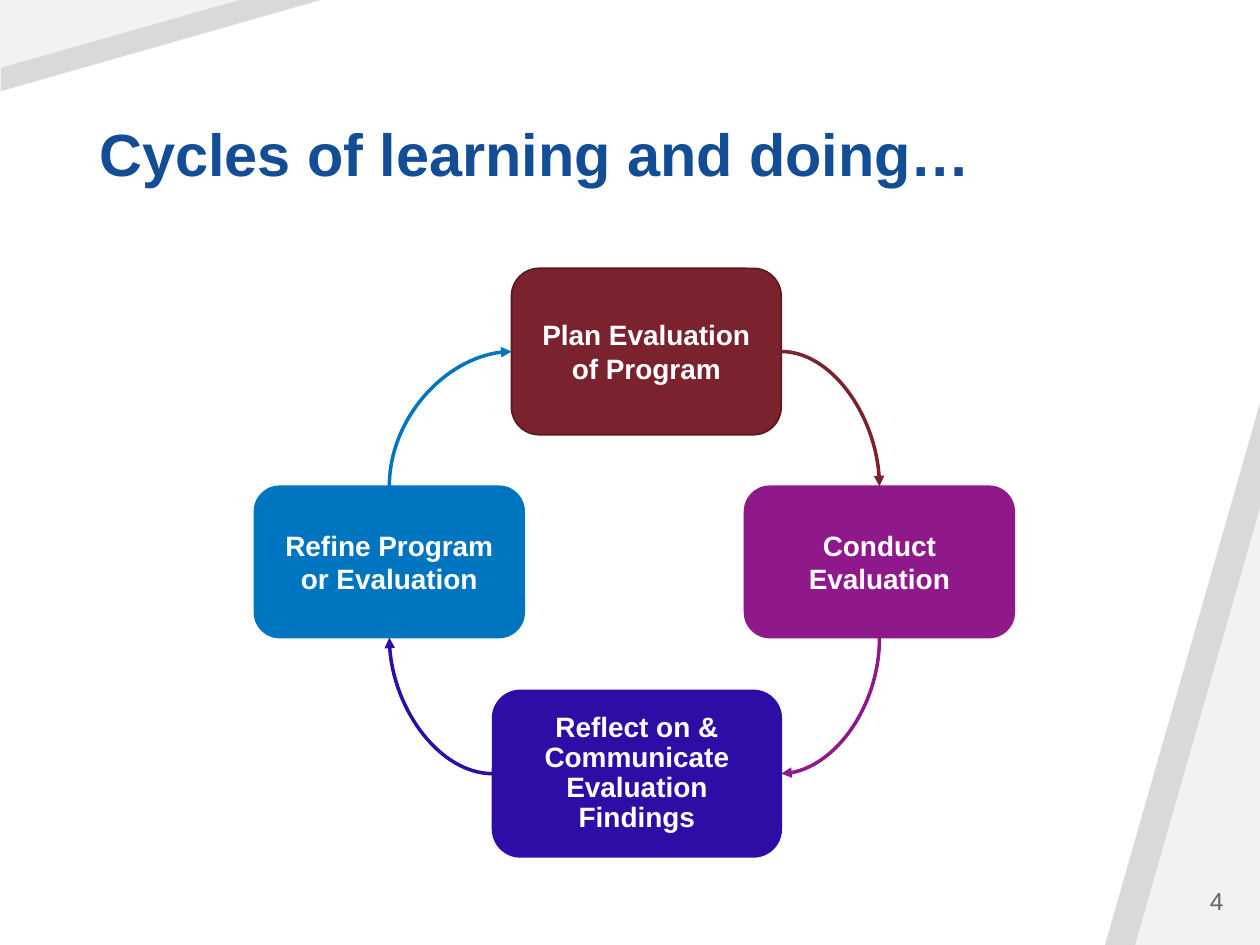
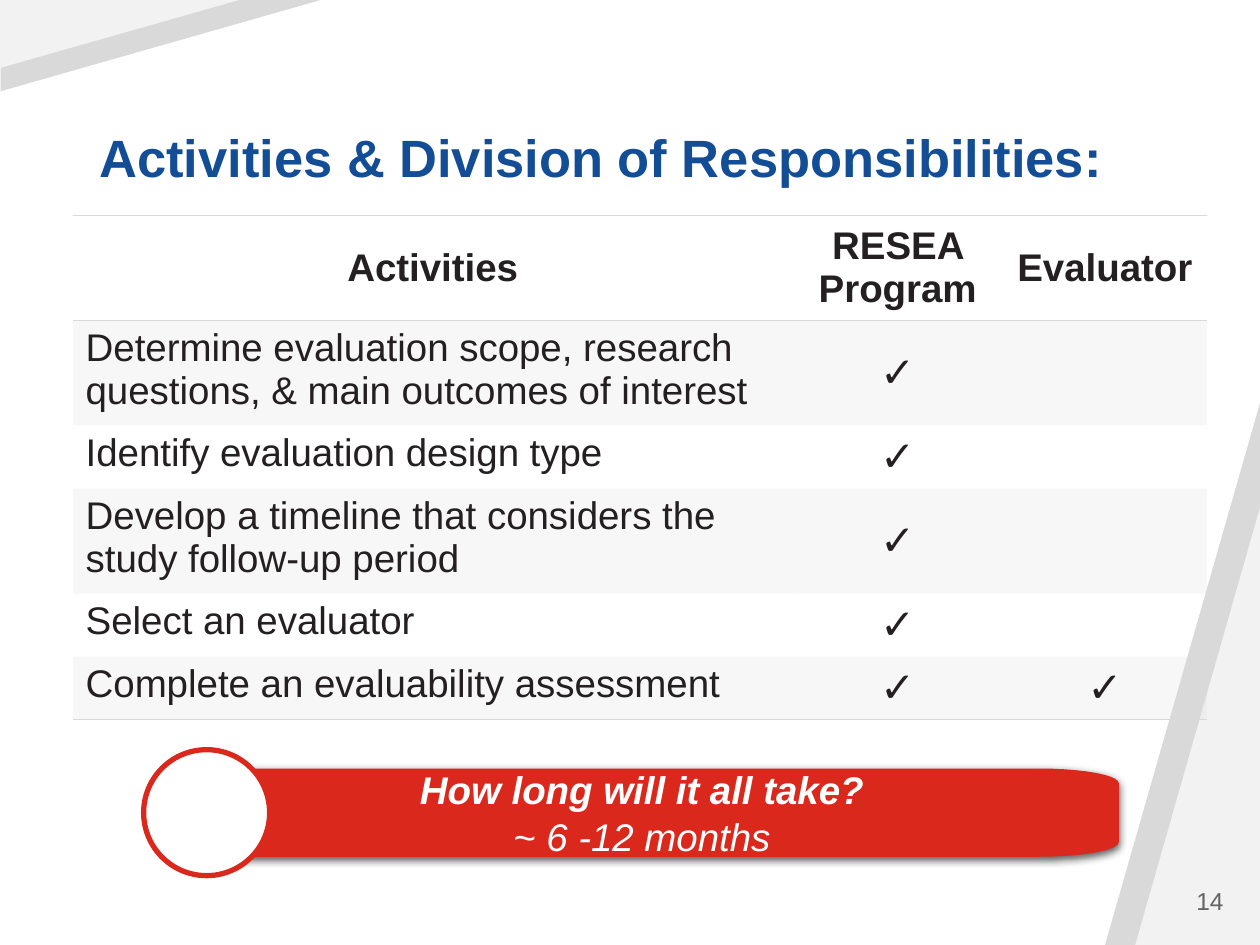
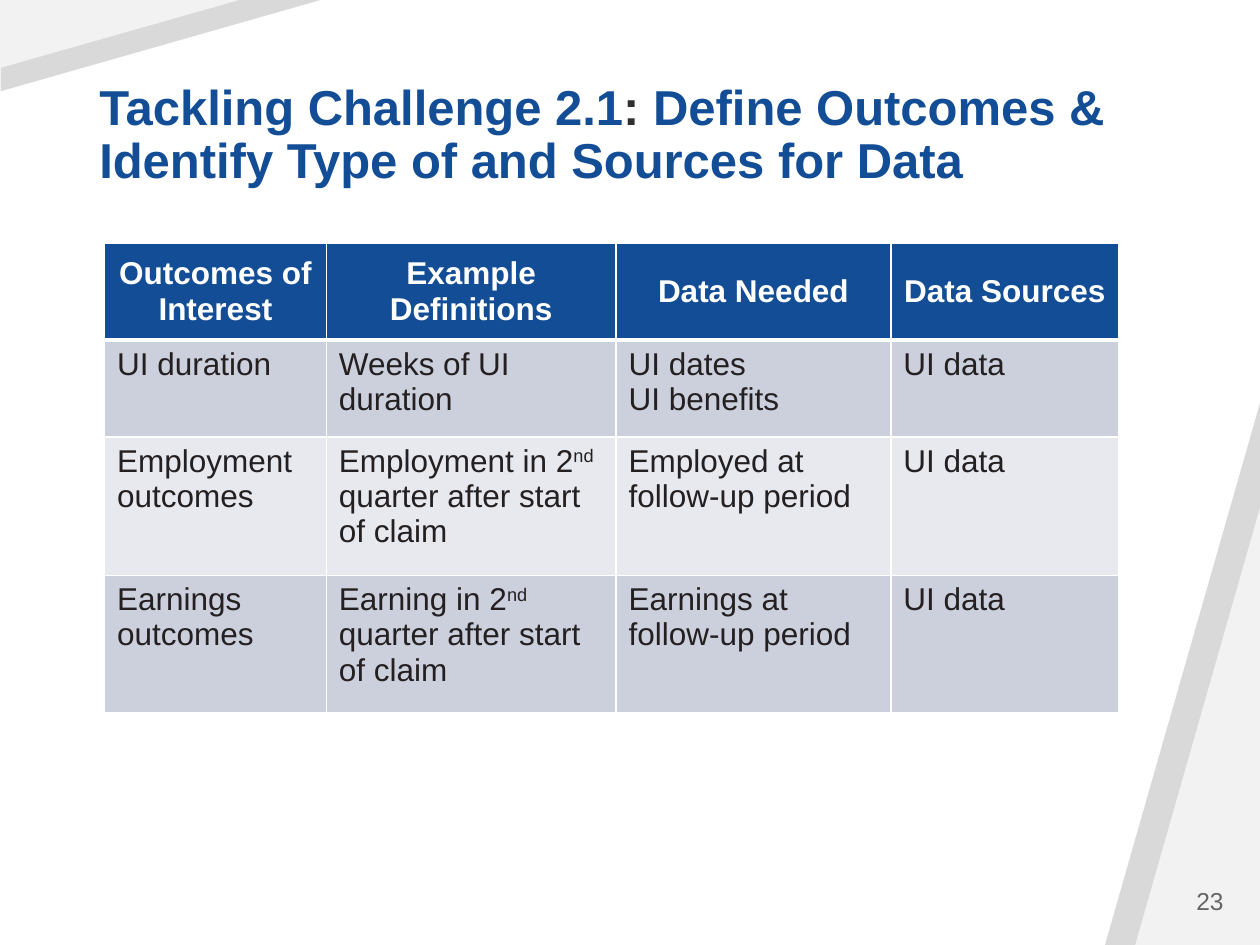
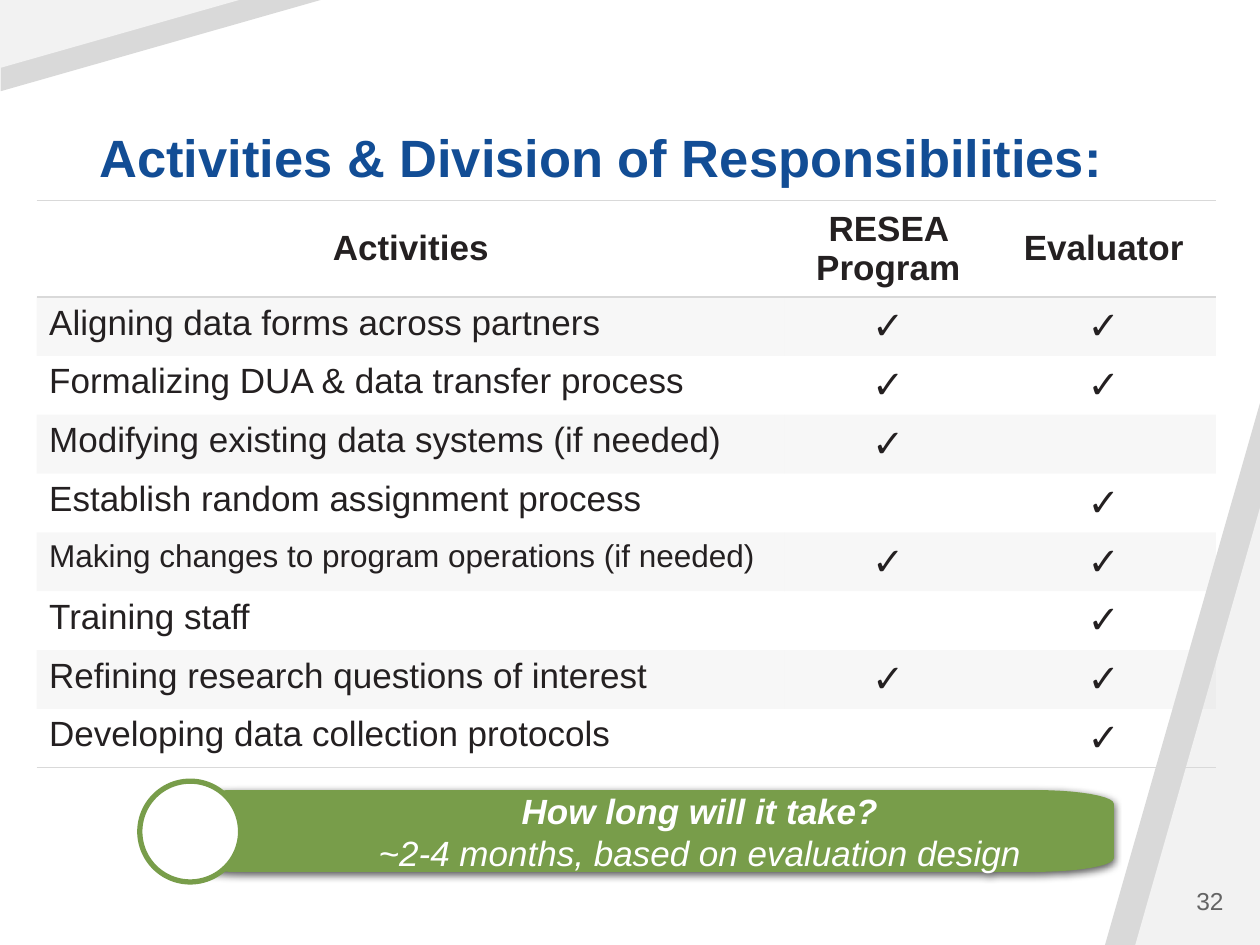
from math import cos, sin, radians
from lxml.etree import SubElement
from pptx import Presentation
from pptx.dml.color import RGBColor
from pptx.enum.shapes import MSO_CONNECTOR, MSO_SHAPE
from pptx.enum.text import MSO_ANCHOR, PP_ALIGN
from pptx.oxml.ns import qn
from pptx.util import Inches, Pt

FONT = "Arial"
NO_STYLE = "{2D5ABB26-0587-4C30-8999-92F81FD0307C}"

NAVY = RGBColor(0x12, 0x4D, 0x95)
INK = RGBColor(0x24, 0x20, 0x21)
COAL = RGBColor(0x30, 0x30, 0x30)
GREY = RGBColor(0x64, 0x64, 0x64)
SILVER = RGBColor(0xD9, 0xD9, 0xD9)
PALE = RGBColor(0xF2, 0xF2, 0xF2)
WHITE = RGBColor(0xFF, 0xFF, 0xFF)
WINE = RGBColor(0x7A, 0x23, 0x2E)
MAROON = RGBColor(0x5A, 0x1A, 0x22)
PLUM = RGBColor(0x8F, 0x19, 0x8A)
INDIGO = RGBColor(0x2E, 0x0D, 0xA6)
BLUE = RGBColor(0x00, 0x75, 0xBF)
RED = RGBColor(0xDA, 0x29, 0x1C)
GREEN = RGBColor(0x78, 0x9D, 0x4A)
BAND = RGBColor(0xCC, 0xD0, 0xDD)
LIGHT = RGBColor(0xE7, 0xE9, 0xEF)

# Content: corner bands (box, turn, fill)
WEDGES = [
    ((8.77, 3.2, 1.23, 4.3), 0, SILVER),
    ((9.01, 4.03, 0.99, 3.47), 0, PALE),
    ((0.92, -0.92, 0.73, 2.56), 270, SILVER),
    ((0.68, -0.68, 0.54, 1.9), 270, PALE),
]

# Content: cycle steps, clockwise (text, box, fill, line, line spacing)
STEPS = [
    ("Plan Evaluation of Program", (4.06, 2.13, 2.14, 1.32), WINE, MAROON, 1),
    ("Conduct Evaluation", (5.91, 3.86, 2.14, 1.2), PLUM, PLUM, 1),
    ("Reflect on & Communicate Evaluation Findings",
     (3.91, 5.48, 2.29, 1.32), INDIGO, INDIGO, 0.9),
    ("Refine Program or Evaluation", (2.02, 3.86, 2.14, 1.2), BLUE, BLUE, 1),
]

# Content: duty tables (activity, program does it, evaluator does it)
DUTY_TITLE = "Activities & Division of Responsibilities:"
DUTY_HEAD = ["Activities", "RESEA Program", "Evaluator"]
PLAN = dict(
    page=14, at=(0.58, 1.71), cols=[5.71, 1.67, 1.62], size=22,
    highs=[0.78, 0.78, 0.47, 0.78, 0.47, 0.47],
    rows=[
        ("Determine evaluation scope, research questions, & main outcomes of interest", 1, 0),
        ("Identify evaluation design type", 1, 0),
        ("Develop a timeline that considers the study follow-up period", 1, 0),
        ("Select an evaluator", 1, 0),
        ("Complete an evaluability assessment", 1, 1),
    ],
    note=["How long will it all take?", "~ 6 -12 months"],
    bar=(1.31, 6.1, 7.57, 0.7), disc=(1.14, 5.95, 1), color=RED, indent=0)
LAUNCH = dict(
    page=32, at=(0.29, 1.59), cols=[5.94, 1.64, 1.78], size=20,
    highs=[0.72] + [0.45] * 8,
    rows=[
        ("Aligning data forms across partners", 1, 1),
        ("Formalizing DUA & data transfer process", 1, 1),
        ("Modifying existing data systems (if needed)", 1, 0),
        ("Establish random assignment process", 0, 1),
        ("Making changes to program operations (if needed)", 1, 1),
        ("Training staff", 0, 1),
        ("Refining research questions of interest", 1, 1),
        ("Developing data collection protocols", 0, 1),
    ],
    note=["How long will it take?", "~2-4 months, based on evaluation design"],
    bar=(1.27, 6.27, 7.57, 0.65), disc=(1.11, 6.2, 0.8), color=GREEN, indent=1)
SMALL = {"Making changes to program operations (if needed)": 18}

# Content: outcomes table; ^ marks superscript, a line break a new paragraph
OUTCOMES = [
    ["Outcomes of Interest", "Example Definitions", "Data Needed", "Data Sources"],
    ["UI duration", "Weeks of UI duration", "UI dates\nUI benefits", "UI data"],
    ["Employment outcomes", "Employment in 2^nd^ quarter after start of claim",
     "Employed at follow-up period", "UI data"],
    ["Earnings outcomes", "Earning in 2^nd^ quarter after start of claim",
     "Earnings at follow-up period", "UI data"],
]


# Text helpers
def style(run, size, color, bold=False, slant=False):
    font = run.font
    font.name, font.size, font.bold, font.italic = FONT, Pt(size), bold, slant
    font.color.rgb = color


def write(frame, text, size, color, bold=False, align=PP_ALIGN.LEFT):
    frame.word_wrap = True
    for i, line in enumerate(text.split("\n")):
        para = frame.paragraphs[0] if i == 0 else frame.add_paragraph()
        para.alignment = align
        for j, part in enumerate(line.split("^")):
            run = para.add_run()
            run.text = part
            style(run, size, color, bold)
            if j % 2:
                run._r.get_or_add_rPr().set("baseline", "30000")


# Shape helpers
def paint(shape, fill, line=None, width=1):
    shape.shadow.inherit = False
    shape.fill.solid()
    shape.fill.fore_color.rgb = fill
    if line is None:
        shape.line.fill.background()
    else:
        shape.line.color.rgb = line
        shape.line.width = Pt(width)


def place(slide, kind, box, fill, line=None, width=1):
    shape = slide.shapes.add_shape(kind, *map(Inches, box))
    paint(shape, fill, line, width)
    return shape


def fade(parent, percent):
    tint = next(parent.iter(qn("a:srgbClr")))
    SubElement(tint, qn("a:alpha")).set("val", str(percent * 1000))


# Shared slide parts
def add_bands(slide, layout):
    for box, turn, fill in WEDGES:
        wedge = place(slide, MSO_SHAPE.ISOSCELES_TRIANGLE, box, fill)
        wedge.adjustments[0] = 1
        if turn:
            wedge.rotation = turn
            wedge.element.spPr.find(qn("a:xfrm")).set("flipV", "1")
        layout.shapes.element.append(wedge.element)


def add_slide(deck, page, parts, size):
    layout = deck.slide_layouts[6]
    slide = deck.slides.add_slide(layout)
    if len(deck.slides) == 1:
        add_bands(slide, layout)
    frame = slide.shapes.add_textbox(*map(Inches, (0.69, 0.4, 8.7, 1.15))).text_frame
    frame.word_wrap = True
    frame.vertical_anchor = MSO_ANCHOR.BOTTOM
    para = frame.paragraphs[0]
    para.line_spacing = 0.9
    for text, color in parts:
        run = para.add_run()
        run.text = text
        style(run, size, color, True)
    foot = slide.shapes.add_textbox(*map(Inches, (8.41, 6.95, 1.4, 0.4))).text_frame
    foot.vertical_anchor = MSO_ANCHOR.MIDDLE
    write(foot, str(page), 14, GREY, align=PP_ALIGN.RIGHT)
    return slide


# Tables
def add_grid(slide, at, cols, highs):
    table = slide.shapes.add_table(
        len(highs), len(cols), *map(Inches, (*at, sum(cols), sum(highs)))).table
    table.horz_banding = False
    table._tbl.tblPr.find(qn("a:tableStyleId")).text = NO_STYLE
    for col, width in zip(table.columns, cols):
        col.width = Inches(width)
    for row, high in zip(table.rows, highs):
        row.height = Inches(high)
    return table


def fill_cell(cell, fill, edges, color, percent=100):
    """Set borders, given as side letter to width, then the fill."""
    props = cell._tc.get_or_add_tcPr()
    for side in "LRTB":
        if side in edges:
            line = SubElement(props, qn("a:ln" + side), w=str(Pt(edges[side])))
            solid = SubElement(line, qn("a:solidFill"))
            SubElement(solid, qn("a:srgbClr"), val=str(color))
    if fill is None:
        cell.fill.background()
        return
    cell.fill.solid()
    cell.fill.fore_color.rgb = fill
    if percent < 100:
        fade(props.find(qn("a:solidFill")), percent)


def add_duties(slide, at, cols, highs, rows, size):
    table = add_grid(slide, at, cols, highs)
    marks = [(name, *("✓" if done else "" for done in does)) for name, *does in rows]
    for r, row in enumerate([DUTY_HEAD] + marks):
        edges = {"T": 1, "B": 1} if r == 0 else {"B": 1} if r == len(rows) else {}
        for c, text in enumerate(row):
            cell = table.cell(r, c)
            fill_cell(cell, SILVER if r % 2 else None, edges, SILVER, 20)
            if not text:
                continue
            if r and c == 0:
                write(cell.text_frame, text, SMALL.get(text, size), INK)
            else:
                cell.vertical_anchor = MSO_ANCHOR.MIDDLE
                write(cell.text_frame, text, size + 2 if r else size, INK, True,
                      PP_ALIGN.CENTER)


def add_outcomes(slide):
    table = add_grid(slide, (0.83, 1.93), [1.76, 2.3, 2.18, 1.81],
                     [0.77, 0.77, 1.1, 1.09])
    for r, row in enumerate(OUTCOMES):
        edges = {"L": 1, "R": 1, "B": 1 if r else 3}
        if r != 1:
            edges["T"] = 1
        for c, text in enumerate(row):
            cell = table.cell(r, c)
            fill_cell(cell, (BAND if r % 2 else LIGHT) if r else NAVY, edges, WHITE)
            if r:
                write(cell.text_frame, text, 18, INK)
            else:
                cell.vertical_anchor = MSO_ANCHOR.MIDDLE
                write(cell.text_frame, text, 18, WHITE, True, PP_ALIGN.CENTER)


# Time banner: bar with elliptic corners, and a disc at its left end
def add_banner(slide, note, bar, disc, color, indent, size):
    x, y, w, h = bar
    rx, ry = w / 12, h / 6
    hubs = [(x + w - rx, y + ry), (x + w - rx, y + h - ry),
            (x + rx, y + h - ry), (x + rx, y + ry)]
    dots = [(Inches(hx + rx * cos(radians(a))), Inches(hy + ry * sin(radians(a))))
            for i, (hx, hy) in enumerate(hubs)
            for a in range(90 * i - 90, 90 * i + 1, 9)]
    pen = slide.shapes.build_freeform(*dots[0], scale=1.0)
    pen.add_line_segments(dots[1:], close=True)
    shape = pen.convert_to_shape()
    paint(shape, color)
    glow = SubElement(shape.element.spPr.find(qn("a:effectLst")), qn("a:outerShdw"),
                      blurRad=str(Pt(4.5)), dist=str(Pt(1.5)), dir="5400000")
    SubElement(glow, qn("a:srgbClr"), val="000000")
    fade(glow, 63)
    frame = shape.text_frame
    frame.margin_left = Inches(0.11 + indent)
    frame.margin_right = frame.margin_top = frame.margin_bottom = Inches(0.11)
    frame.vertical_anchor = MSO_ANCHOR.MIDDLE
    write(frame, "\n".join(note), size, WHITE, align=PP_ALIGN.CENTER)
    for i, para in enumerate(frame.paragraphs):
        style(para.runs[0], size, WHITE, i == 0, True)
    left, top, wide = disc
    place(slide, MSO_SHAPE.OVAL, (left, top, wide, wide), WHITE, color, 3)


# Cycle diagram
def add_link(slide, start, end, turn, color):
    (x1, y1), (x2, y2) = start, end
    w, h = abs(x2 - x1), abs(y2 - y1)
    if turn % 180:
        w, h = h, w
    mx, my = (x1 + x2) / 2, (y1 + y2) / 2
    link = slide.shapes.add_connector(MSO_CONNECTOR.CURVE, *map(
        Inches, (mx - w / 2, my - h / 2, mx + w / 2, my + h / 2)))
    link.line.color.rgb = color
    link.line.width = Pt(2)
    props = link.element.spPr
    props.find(qn("a:xfrm")).set("rot", str(turn * 60000))
    props.find(qn("a:prstGeom")).set("prst", "curvedConnector2")
    SubElement(props.find(qn("a:ln")), qn("a:tailEnd"), type="triangle")
    SubElement(props, qn("a:effectLst"))


def add_cycle(slide):
    ports = []
    for text, box, fill, line, gap in STEPS:
        step = place(slide, MSO_SHAPE.ROUNDED_RECTANGLE, box, fill, line)
        step.text_frame.vertical_anchor = MSO_ANCHOR.MIDDLE
        write(step.text_frame, text, 16, WHITE, True, PP_ALIGN.CENTER)
        step.text_frame.paragraphs[0].line_spacing = gap
        x, y, w, h = box
        ports.append(dict(top=(x + w / 2, y), right=(x + w, y + h / 2),
                          base=(x + w / 2, y + h), left=(x, y + h / 2)))
    sides = [("right", "top"), ("base", "right"), ("left", "base"), ("top", "left")]
    for i, (leave, reach) in enumerate(sides):
        add_link(slide, ports[i][leave], ports[(i + 1) % 4][reach], 90 * i, STEPS[i][2])


def add_duty_slide(deck, duty):
    slide = add_slide(deck, duty["page"], [(DUTY_TITLE, NAVY)], 30)
    add_duties(slide, *(duty[k] for k in ("at", "cols", "highs", "rows", "size")))
    add_banner(slide, *(duty[k] for k in
                        ("note", "bar", "disc", "color", "indent", "size")))


def main():
    deck = Presentation()
    deck.slide_width, deck.slide_height = Inches(10), Inches(7.5)
    add_cycle(add_slide(deck, 4, [("Cycles of learning and doing…", NAVY)], 34))
    add_duty_slide(deck, PLAN)
    add_outcomes(add_slide(deck, 23, [
        ("Tackling Challenge 2.1", NAVY), (": ", COAL),
        ("Define Outcomes & Identify Type of and Sources for Data", NAVY)], 28))
    add_duty_slide(deck, LAUNCH)
    deck.save("out.pptx")


if __name__ == "__main__":
    main()
